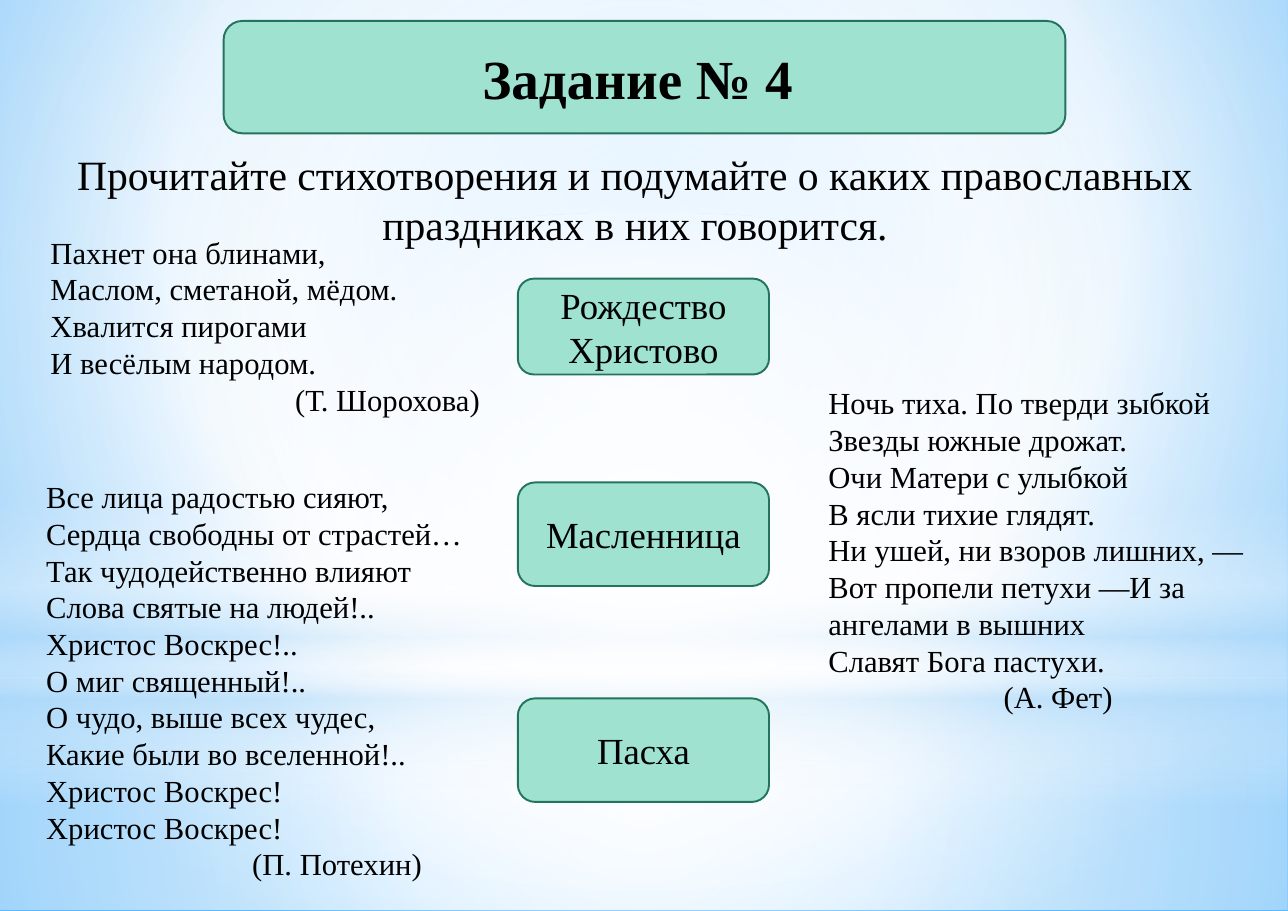
from dataclasses import dataclass

from lxml.etree import SubElement
from pptx import Presentation
from pptx.dml.color import RGBColor
from pptx.enum.shapes import MSO_SHAPE
from pptx.enum.text import MSO_ANCHOR, PP_ALIGN
from pptx.oxml.ns import qn
from pptx.util import Inches, Pt

COLORS = {
    "text": "000000",
    "card": "9EE2CF",
    "outline": "23735D",
    "white": "FFFFFF",
    "haze": "B4DCFA",
    "sky": "9ED5FF",
    "deep_sky": "5BB9FF",
}
FONT = "Times New Roman"
CENTER = (50, 50, 50, 50)


@dataclass
class Glow:
    top: float
    height: float
    stops: tuple
    focus: tuple | None = CENTER
    outline: MSO_SHAPE = MSO_SHAPE.RECTANGLE


@dataclass
class Card:
    caption: str
    box: tuple
    size: float = 24
    bold: bool = False


@dataclass
class Poem:
    box: tuple
    lines: tuple
    author: str
    author_indent: float


SKY_STOPS = ((0, "sky", 100), (60, "white", 100), (100, "deep_sky", 100))
GLOWS = (
    Glow(6.15, 2.11, ((0, "white", 91), (37, "white", 76), (100, "haze", 79))),
    Glow(0, 6.15, ((0, "white", 89), (48, "white", 62), (100, "haze", 79))),
    Glow(4.54, 2.76, ((0, "white", 0), (29, "white", 30), (45, "haze", 40),
                      (55, "white", 26), (65, "haze", 60), (100, "white", 0)), None),
    Glow(1.93, 6.15, ((0, "white", 100), (56, "white", 0)), outline=MSO_SHAPE.OVAL),
)
CARDS = (
    Card("Задание № 4 ", (2.03, 0.19, 7.64, 1.02), 36, True),
    Card("Рождество Христово", (4.7, 2.53, 2.28, 0.87)),
    Card("Масленница", (4.7, 4.38, 2.28, 0.94)),
    Card("Пасха", (4.7, 6.34, 2.28, 0.94)),
)
POEMS = (
    Poem((0.36, 2.07, 4.4, 1.78), (
        "Пахнет она блинами,",
        "Маслом, сметаной, мёдом.",
        "Хвалится пирогами",
        "И весёлым народом.",
    ), "(Т. Шорохова)", 2.22),
    Poem((0.32, 4.29, 4.42, 3.8), (
        "Все лица радостью сияют,",
        "Сердца свободны от страстей…",
        "Так чудодейственно влияют",
        "Слова святые на людей!..",
        "Христос Воскрес!..",
        "О миг священный!..",
        "О чудо, выше всех чудес,",
        "Какие были во вселенной!..",
        "Христос Воскрес!",
        "Христос Воскрес!",
    ), "(П. Потехин)", 1.87),
    Poem((7.42, 3.44, 4.02, 3.13), (
        "Ночь тиха. По тверди зыбкой",
        "Звезды южные дрожат.",
        "Очи Матери с улыбкой",
        "В ясли тихие глядят.",
        "Ни ушей, ни взоров лишних, —",
        "Вот пропели петухи —И за ангелами в вышних",
        "Славят Бога пастухи.",
    ), "(А. Фет)", 1.59),
)
INSTRUCTION = ("Прочитайте стихотворения и подумайте о каких "
               "православных праздниках в них говорится.")


def color(name: str) -> RGBColor:
    return RGBColor.from_string(COLORS[name])


def paint_gradient(owner, fill, stops: tuple, focus: tuple | None) -> None:
    fill.solid()
    solid = next(owner.iter(qn("a:solidFill")))
    gradient = solid.makeelement(qn("a:gradFill"), {"rotWithShape": "1"})
    stop_list = SubElement(gradient, qn("a:gsLst"))
    for position, name, opacity in stops:
        stop = SubElement(stop_list, qn("a:gs"), pos=str(position * 1000))
        tint = SubElement(stop, qn("a:srgbClr"), val=COLORS[name])
        if opacity < 100:
            SubElement(tint, qn("a:alpha"), val=str(opacity * 1000))
    if focus:
        radial = SubElement(gradient, qn("a:path"))
        radial.set("path", "circle")
        sides = {side: str(share * 1000) for side, share in zip("ltrb", focus)}
        SubElement(radial, qn("a:fillToRect"), sides)
    else:
        SubElement(gradient, qn("a:lin"), ang="5400000", scaled="0")
    solid.getparent().replace(solid, gradient)


def write(frame, lines: tuple, *, size: float, bold: bool = False,
          align: PP_ALIGN = PP_ALIGN.LEFT, anchor: MSO_ANCHOR = MSO_ANCHOR.TOP,
          last_indent: float = 0) -> None:
    frame.word_wrap = True
    frame.vertical_anchor = anchor
    for index, line in enumerate(lines):
        paragraph = frame.add_paragraph() if index else frame.paragraphs[0]
        paragraph.alignment = align
        run = paragraph.add_run()
        run.text = line
        run.font.name = FONT
        run.font.size = Pt(size)
        run.font.bold = bold
        run.font.color.rgb = color("text")
    if last_indent:
        paragraph.alignment = PP_ALIGN.LEFT
        paragraph._p.get_or_add_pPr().set("marL", str(Inches(last_indent)))


def draw_glow(slide, glow: Glow, width: int) -> None:
    light = slide.shapes.add_shape(glow.outline, 0, Inches(glow.top),
                                   width, Inches(glow.height))
    light.shadow.inherit = False
    paint_gradient(light.element, light.fill, glow.stops, glow.focus)
    light.line.fill.background()


def draw_card(slide, card: Card) -> None:
    plate = slide.shapes.add_shape(MSO_SHAPE.FLOWCHART_ALTERNATE_PROCESS,
                                   *map(Inches, card.box))
    plate.shadow.inherit = False
    plate.fill.solid()
    plate.fill.fore_color.rgb = color("card")
    plate.line.color.rgb = color("outline")
    plate.line.width = Pt(1.25)
    write(plate.text_frame, (card.caption,), size=card.size, bold=card.bold,
          align=PP_ALIGN.CENTER, anchor=MSO_ANCHOR.MIDDLE)


def draw_poem(slide, poem: Poem) -> None:
    verse = slide.shapes.add_textbox(*map(Inches, poem.box))
    write(verse.text_frame, (*poem.lines, poem.author), size=20,
          last_indent=poem.author_indent)


def main() -> None:
    deck = Presentation()
    deck.slide_width, deck.slide_height = Inches(11.69), Inches(8.27)
    slide = deck.slides.add_slide(deck.slide_layouts[6])
    paint_gradient(slide.element, slide.background.fill, SKY_STOPS, (20, 10, 20, 60))
    for glow in GLOWS:
        draw_glow(slide, glow, deck.slide_width)
    instruction = slide.shapes.add_textbox(*map(Inches, (0.33, 1.3, 10.87, 0.87)))
    write(instruction.text_frame, (INSTRUCTION,), size=27.2, align=PP_ALIGN.CENTER)
    for card in CARDS:
        draw_card(slide, card)
    for poem in POEMS:
        draw_poem(slide, poem)
    deck.save("out.pptx")


if __name__ == "__main__":
    main()
